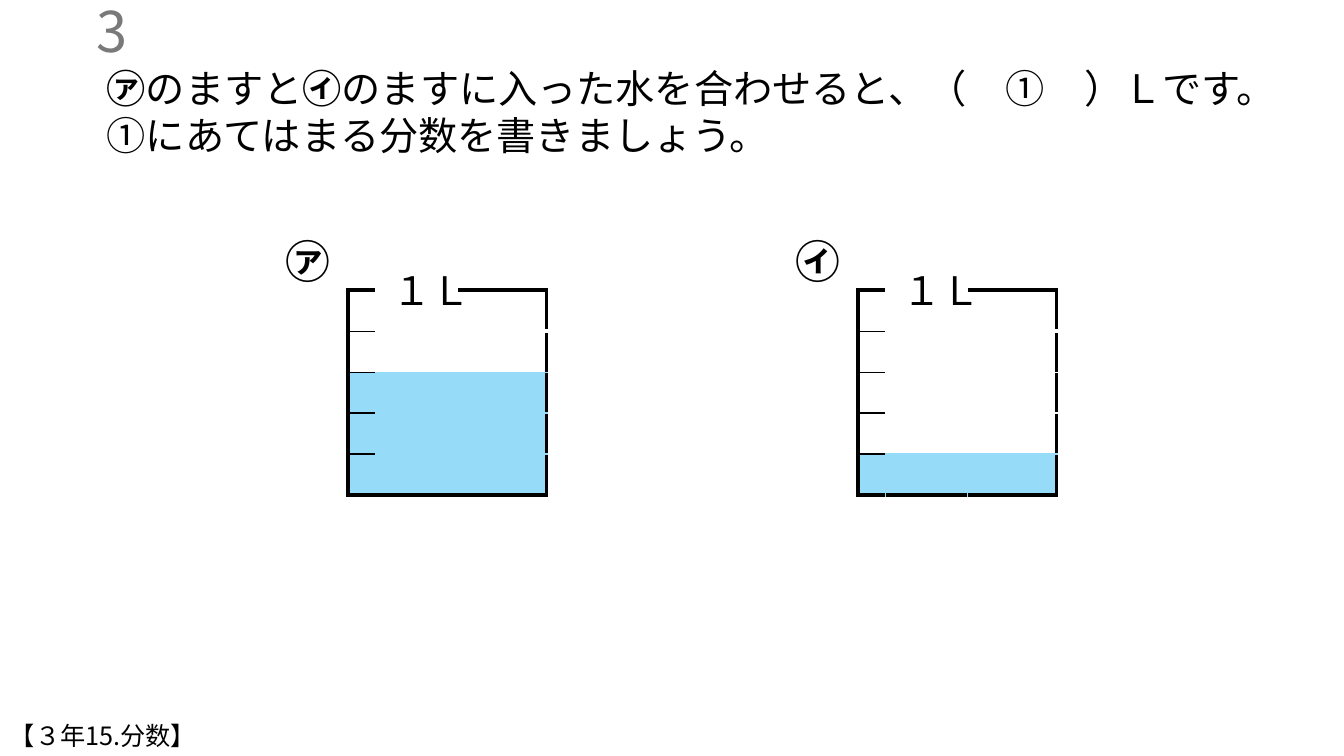
from dataclasses import dataclass

from lxml.etree import SubElement
from pptx import Presentation
from pptx.dml.color import RGBColor
from pptx.enum.text import MSO_ANCHOR as Anchor, MSO_AUTO_SIZE as AutoSize, PP_ALIGN as Align
from pptx.oxml import parse_xml
from pptx.oxml.ns import nsdecls, qn
from pptx.util import Inches, Pt


@dataclass(frozen=True)
class Theme:
    font: str = "Noto Sans CJK JP"
    ink: str = "000000"
    grey: str = "797979"
    paper: str = "FFFFFF"
    water: str = "96DCF8"
    number: int = 40
    letter: int = 32
    text: int = 28
    footer: int = 18
    wall: int = 3
    tick: int = 1


THEME = Theme()
WIDTH, HEIGHT = Inches(13.33), Inches(7.5)
NO_STYLE = "{2D5ABB26-0587-4C30-8999-92F81FD0307C}"
VESSEL_TOP, VESSEL_WIDTH, VESSEL_HEIGHT = 38.4, 14.78, 27.07
COLUMN_SHARES = (0.14, 0.41, 0.45)
SCALE_STEPS = 5


def area(left, top, width, height):
    """Turn percentages of the slide into left, top, width and height."""
    return (round(WIDTH * left / 100), round(HEIGHT * top / 100),
            round(WIDTH * width / 100), round(HEIGHT * height / 100))


def place(box, bounds):
    box.left, box.top, box.width, box.height = area(*bounds)


def write(box, text, size, color=THEME.ink, align=Align.LEFT, anchor=Anchor.TOP, wrap=True):
    frame = box.text_frame
    frame.text = text
    frame.word_wrap = wrap
    frame.auto_size = AutoSize.NONE
    frame.vertical_anchor = anchor
    for para in frame.paragraphs:
        para.alignment = align
        para.space_before = Pt(0)
        para.line_spacing = 1.0
        for span in para.runs:
            style_span(span, size, color)


def style_span(span, size, color):
    font = span.font
    font.size, font.name = Pt(size), THEME.font
    font.color.rgb = RGBColor.from_string(color)
    east_asian = SubElement(span._r.get_or_add_rPr(), qn("a:ea"))
    east_asian.set("typeface", THEME.font)


def add_text(page, bounds, text, size, **options):
    box = page.shapes.add_textbox(*area(*bounds))
    write(box, text, size, **options)
    return box


def add_question(box, first_line, second_line):
    """Fill the body; first_line is a list of (text, bold) pieces."""
    place(box, (7.2, 7.87, 89.95, 13.87))
    frame = box.text_frame
    frame.text = "\n".join(["", second_line])
    for text, _ in first_line:
        frame.paragraphs[0].add_run().text = text
    frame.word_wrap = True
    frame.auto_size = AutoSize.NONE
    for para in frame.paragraphs:
        properties = para._p.get_or_add_pPr()
        properties.set("marL", "0")
        properties.set("indent", "0")
        SubElement(properties, qn("a:buNone"))
        para.space_before = Pt(0)
        para.line_spacing = 1.0
        for span in para.runs:
            style_span(span, THEME.text, THEME.ink)
    for span, (_, bold) in zip(frame.paragraphs[0].runs, first_line):
        span.font.bold = bold


def set_borders(cell, borders):
    """Draw borders, given as side: (colour, points), ahead of the cell's fill."""
    properties = cell._tc.get_or_add_tcPr()
    sides = [side for side in "LRTB" if side in borders]
    for index, side in enumerate(sides):
        color, points = borders[side]
        properties.insert(index, parse_xml(
            f'<a:ln{side} {nsdecls("a")} w="{Pt(points)}"><a:solidFill>'
            f'<a:srgbClr val="{color}"/></a:solidFill></a:ln{side}>'))


def cell_borders(row, column, water_top):
    """Walls outside, scale ticks in the first column, hidden lines elsewhere."""
    wall, tick = (THEME.ink, THEME.wall), (THEME.ink, THEME.tick)
    color_of = lambda line: THEME.water if line >= water_top else THEME.paper
    hidden = (color_of(row), THEME.tick)
    last_row, last_column = SCALE_STEPS - 1, len(COLUMN_SHARES) - 1
    borders = {"L": hidden, "R": hidden, "T": hidden, "B": (color_of(row + 1), THEME.tick)}
    if column == 0:
        borders.update(L=wall, T=tick, B=tick)
    elif row == 0:
        borders["B"] = (THEME.paper, THEME.wall)
    elif row == 1:
        borders["T"] = (THEME.paper, THEME.wall)
    if column == last_column:
        borders["R"] = wall
    if row == last_row:
        borders["B"] = wall
    if row == 0:
        borders["T"] = wall
        if column == 1:
            del borders["T"]
    return borders


def add_vessel(page, left, letter, water_steps):
    """Add a one-litre measure with its scale, water and labels."""
    frame = page.shapes.add_table(SCALE_STEPS, len(COLUMN_SHARES),
                                  *area(left, VESSEL_TOP, VESSEL_WIDTH, VESSEL_HEIGHT))
    table = frame.table
    table.first_row = table.horz_banding = False
    table._tbl.tblPr.find(qn("a:tableStyleId")).text = NO_STYLE
    total_width = frame.width
    for column, share in zip(table.columns, COLUMN_SHARES):
        column.width = round(total_width * share)
    water_top = SCALE_STEPS - water_steps
    for row in range(SCALE_STEPS):
        for column in range(len(COLUMN_SHARES)):
            cell = table.cell(row, column)
            cell.margin_top = cell.margin_bottom = 0
            cell.text_frame.paragraphs[0].font.size = Pt(THEME.footer)
            if row >= water_top:
                cell.fill.solid()
                cell.fill.fore_color.rgb = RGBColor.from_string(THEME.water)
            else:
                cell.fill.background()
            set_borders(cell, cell_borders(row, column, water_top))
    add_text(page, (left + 2.6, 34.53, 7.43, 7.6), "１Ｌ", THEME.text, wrap=False)
    label = add_text(page, (left - 5.77, 30.27, 5.63, 8.53), letter, THEME.letter,
                     align=Align.CENTER)
    label.text_frame.paragraphs[0].runs[0].font.bold = True


def main():
    deck = Presentation()
    deck.slide_width, deck.slide_height = WIDTH, HEIGHT
    page = deck.slides.add_slide(deck.slide_layouts[1])
    number, question = page.placeholders
    place(number, (-12.23, 1.33, 22.5, 5.33))
    write(number, "3", THEME.number, color=THEME.grey, align=Align.RIGHT, anchor=Anchor.MIDDLE)
    add_question(question, [("㋐", True), ("のますと", False), ("㋑", True),
                            ("のますに入った水を合わせると、（　①　）Ｌです。", False)],
                 "①にあてはまる分数を書きましょう。")
    add_vessel(page, 25.88, "㋐", water_steps=3)
    add_vessel(page, 63.84, "㋑", water_steps=1)
    add_text(page, (0, 94.67, 56.19, 5.33), "【３年15.分数】", THEME.footer)
    deck.save("out.pptx")


if __name__ == "__main__":
    main()
